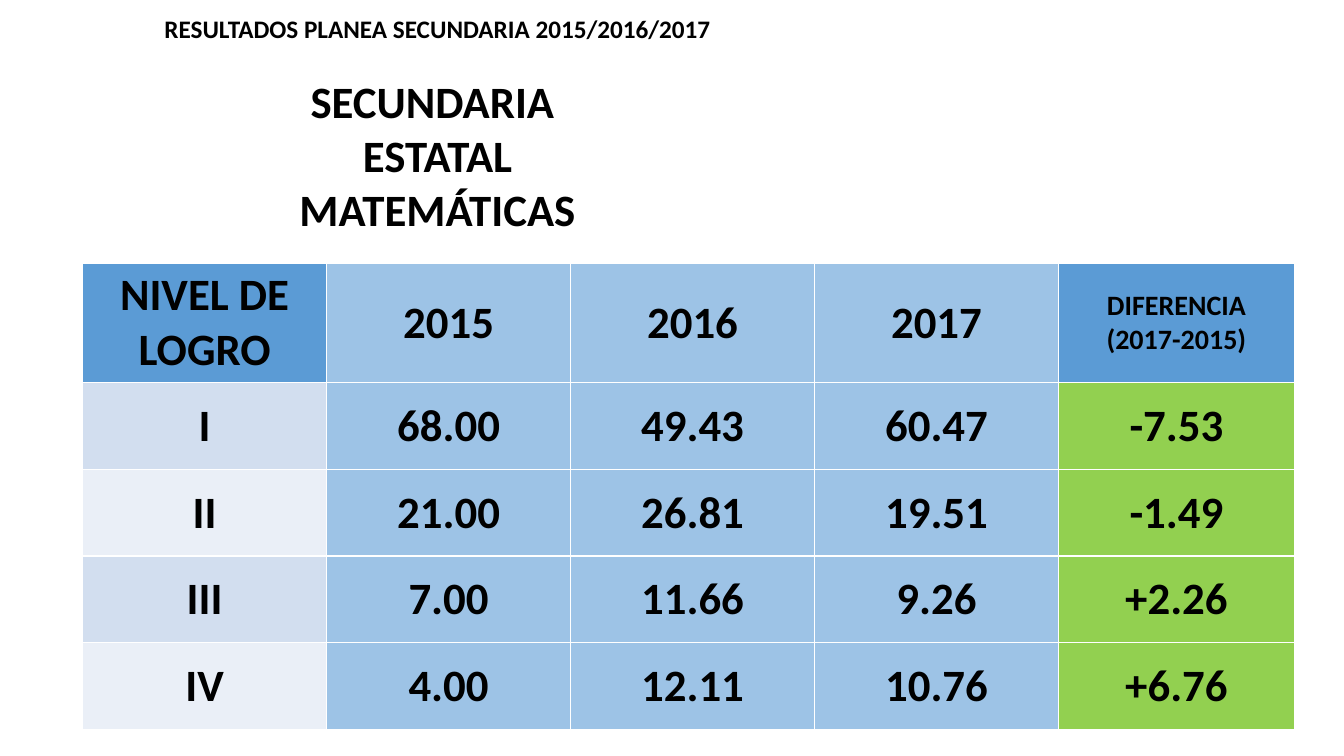
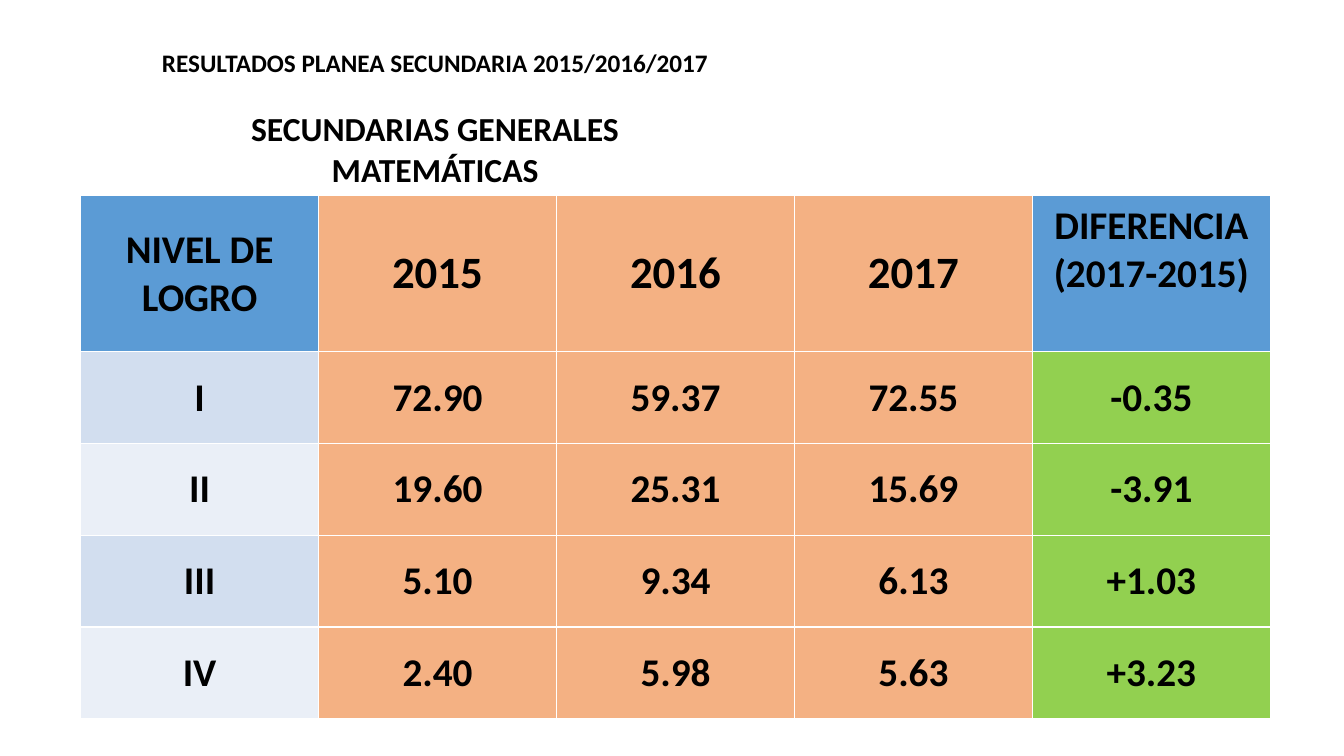
from pptx import Presentation
from pptx.dml.color import RGBColor
from pptx.enum.text import MSO_ANCHOR, PP_ALIGN
from pptx.util import Inches, Pt

CENTER = PP_ALIGN.CENTER
MIDDLE = MSO_ANCHOR.MIDDLE
FONT = "Calibri"
COLORS = {
    "text": "000000",
    "header": "5B9BD5",
    "band_dark": "D2DEEF",
    "band_light": "EAEFF7",
    "difference": "92D050",
    "blue": "9DC3E6",
    "orange": "F4B183",
}
TITLE = "RESULTADOS PLANEA SECUNDARIA 2015/2016/2017"
YEARS = ["2015", "2016", "2017"]
LEVELS = ["I", "II", "III", "IV"]
DIFFERENCE = ["DIFERENCIA", "(2017-2015)"]


def rgb(name):
    return RGBColor.from_string(COLORS[name])


def write_lines(tf, lines, size):
    for i, line in enumerate(lines):
        p = tf.paragraphs[0] if i == 0 else tf.add_paragraph()
        p.text = line
        p.alignment = CENTER
        p.font.name = FONT
        p.font.size = Pt(size)
        p.font.bold = True
        p.font.color.rgb = rgb("text")


def add_heading(s, box, subtitle, size):
    tf = s.shapes.add_textbox(*map(Inches, box)).text_frame
    tf.word_wrap = True
    write_lines(tf, [TITLE] + subtitle, size)
    title, first = tf.paragraphs[:2]
    title.font.size = Pt(18)
    first.space_before = Pt(22)


def fill_cell(cell, lines, size, color):
    cell.fill.solid()
    cell.fill.fore_color.rgb = rgb(color)
    cell.vertical_anchor = MIDDLE
    write_lines(cell.text_frame, lines, size)


def add_results(s, left, top, widths, heights, results, year_color,
                size, difference_size, difference_bottom=0.05):
    table = s.shapes.add_table(
        len(heights), len(widths), Inches(left), Inches(top),
        Inches(sum(widths)), Inches(sum(heights))).table
    for column, width in zip(table.columns, widths):
        column.width = Inches(width)
    for row, height in zip(table.rows, heights):
        row.height = Inches(height)

    last = len(widths) - 1
    fill_cell(table.cell(0, 0), ["NIVEL DE LOGRO"], size, "header")
    for c, year in enumerate(YEARS, 1):
        fill_cell(table.cell(0, c), [year], 32, year_color)
    fill_cell(table.cell(0, last), DIFFERENCE, difference_size, "header")
    table.cell(0, last).margin_bottom = Inches(difference_bottom)

    for r, (level, values) in enumerate(zip(LEVELS, results), 1):
        band = "band_dark" if r % 2 else "band_light"
        fill_cell(table.cell(r, 0), [level], size, band)
        for c, value in enumerate(values, 1):
            fill_cell(table.cell(r, c), [f"{value:.2f}"], size, year_color)
        change = f"{values[-1] - values[0]:+.2f}"
        fill_cell(table.cell(r, last), [change], size, "difference")


def main():
    prs = Presentation()
    prs.slide_width = Inches(13.33)
    prs.slide_height = Inches(7.5)
    blank = prs.slide_layouts[6]

    s = prs.slides.add_slide(blank)
    add_results(
        s, 0.82, 2.61, [2.42] * 4 + [2.34], [1.17] + [0.86] * 4,
        [(68.00, 49.43, 60.47), (21.00, 26.81, 19.51),
         (7.00, 11.66, 9.26), (4.00, 12.11, 10.76)],
        "blue", size=32, difference_size=20)
    add_heading(s, (0.82, 0.08, 7.04, 2.32),
                ["SECUNDARIA ", "ESTATAL", "MATEMÁTICAS"], 32)

    s = prs.slides.add_slide(blank)
    add_results(
        s, 0.8, 1.94, [2.36] * 5, [1.55] + [0.91] * 4,
        [(72.90, 59.37, 72.55), (19.60, 25.31, 15.69),
         (5.10, 9.34, 6.13), (2.40, 5.98, 5.63)],
        "orange", size=28, difference_size=28, difference_bottom=0.52)
    add_heading(s, (0.47, 0.42, 7.69, 1.51),
                ["SECUNDARIAS GENERALES", "MATEMÁTICAS"], 24)

    prs.save("out.pptx")


if __name__ == "__main__":
    main()
